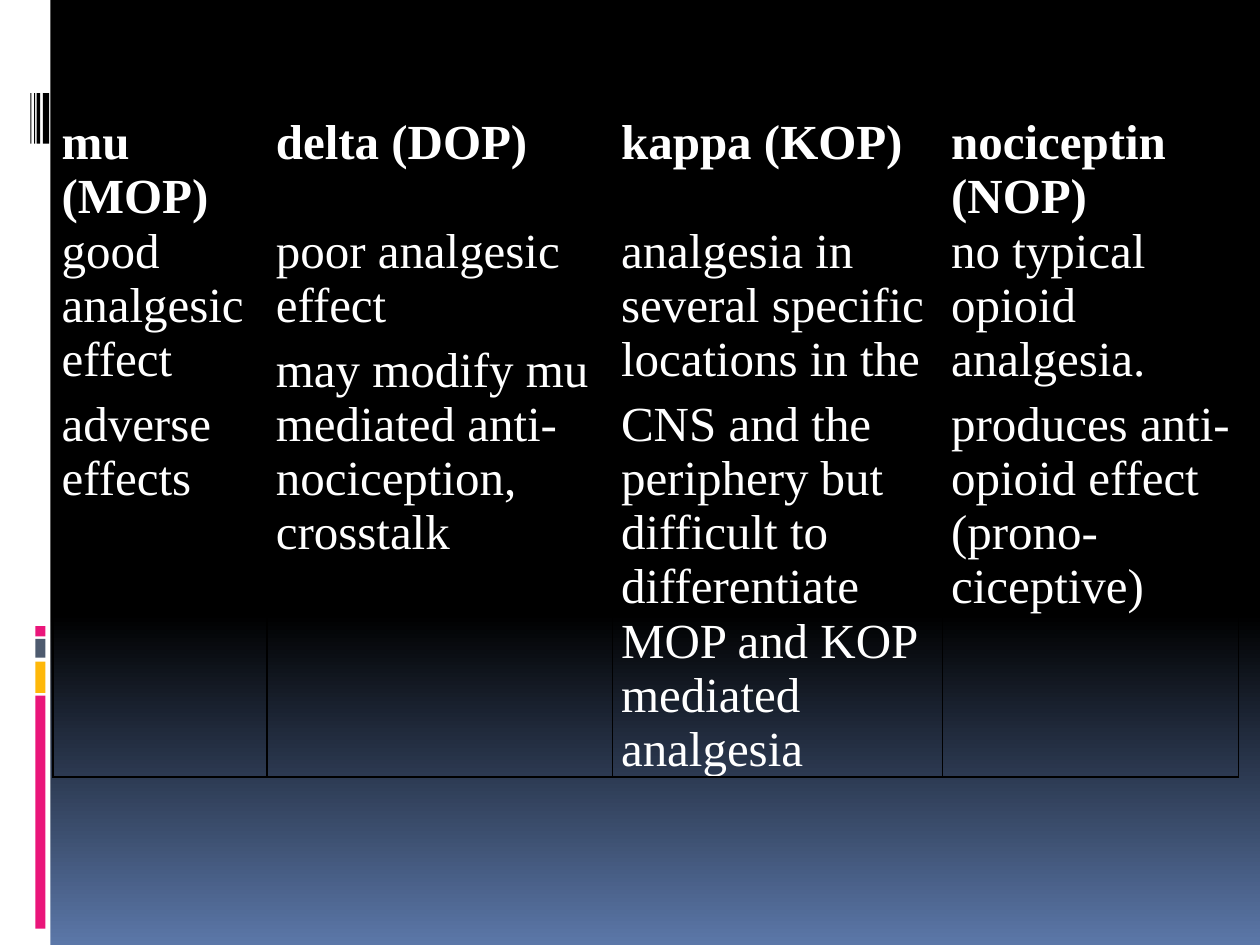
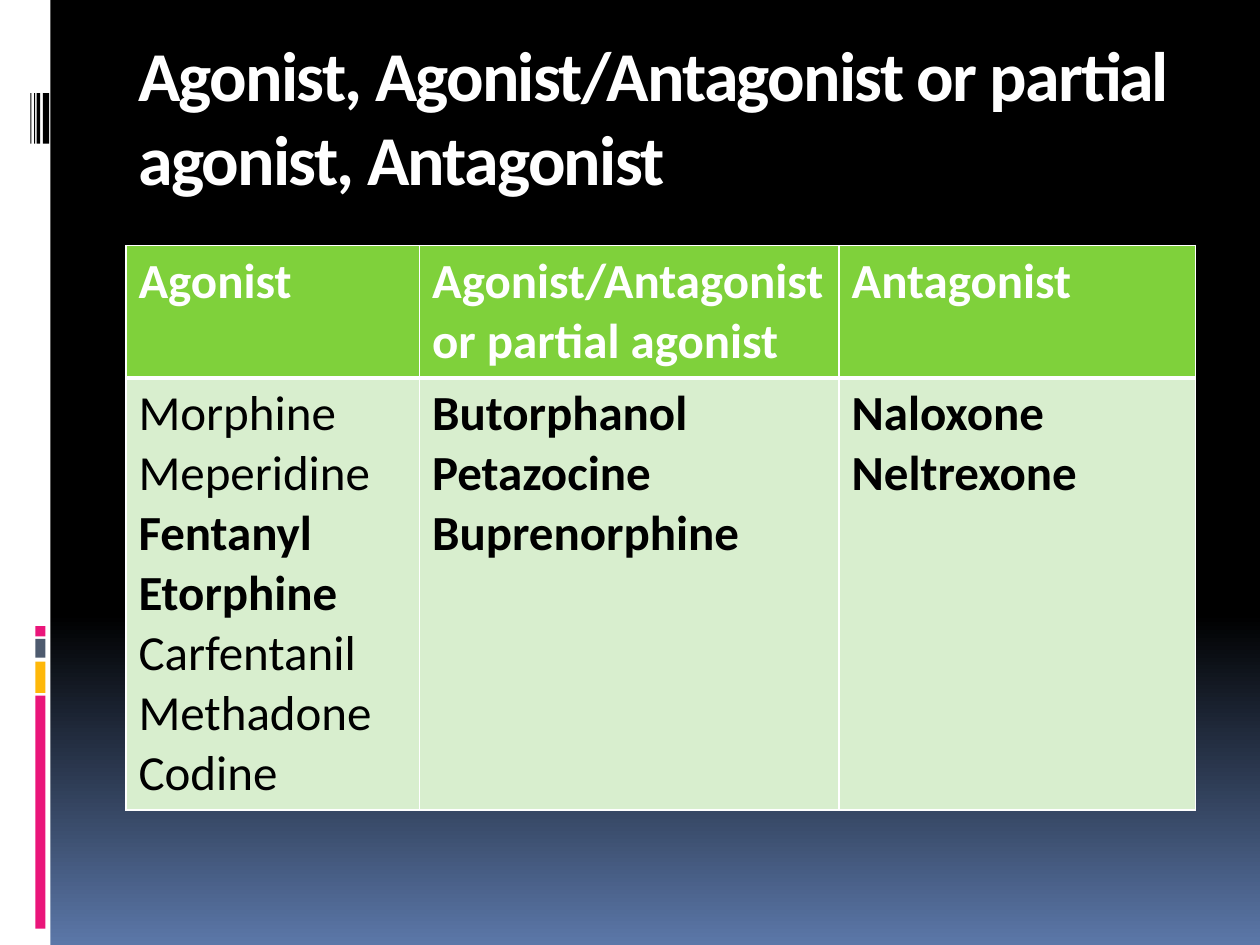
from dataclasses import dataclass
from lxml.etree import SubElement
from pptx import Presentation
from pptx.dml.color import RGBColor
from pptx.enum.shapes import MSO_SHAPE
from pptx.enum.text import MSO_ANCHOR
from pptx.oxml.ns import qn
from pptx.util import Inches, Pt


@dataclass(frozen=True)
class Theme:
    black: str = "000000"
    white: str = "FFFFFF"
    blue: str = "5B77A8"
    pink: str = "EA157A"
    gold: str = "FEB80A"
    slate: str = "4E5B6F"
    green: str = "7FD13B"
    pale: str = "D8EECE"
    serif: str = "Times New Roman"
    sans: str = "Calibri"
    title: int = 40
    body: int = 28


T = Theme()


def rgb(code):
    return RGBColor.from_string(code)


def bar(slide, x, y, w, h, color):
    shape = slide.shapes.add_shape(
        MSO_SHAPE.RECTANGLE, Inches(x), Inches(y), Inches(w), Inches(h))
    shape.shadow.inherit = False
    shape.fill.solid()
    shape.fill.fore_color.rgb = rgb(color)
    shape.line.fill.background()


def write(para, text, font, size, color, bold):
    para.text = text
    para.font.name = font
    para.font.size = Pt(size)
    para.font.bold = bold
    para.font.color.rgb = rgb(color)


def frame(deck):
    """Add a slide with the shared background and left band."""
    slide = deck.slides.add_slide(deck.slide_layouts[6])
    fill = slide.background.fill
    fill.gradient()
    fill.gradient_angle = 270
    for stop, place, color in zip(fill.gradient_stops, (0.65, 1), (T.black, T.blue)):
        stop.position = place
        stop.color.rgb = rgb(color)

    # White band with its colour stack and black stripes
    bar(slide, 0, 0, 0.4, 7.5, T.white)
    for y, h, color in ((5.52, 1.85, T.pink), (5.25, 0.25, T.gold),
                        (5.07, 0.15, T.slate), (4.97, 0.08, T.pink)):
        bar(slide, 0.28, y, 0.08, h, color)
    for x, w in ((0.34, 0.05), (0.29, 0.03), (0.27, 0.01), (0.24, 0.01)):
        bar(slide, x, 0.74, w, 0.4, T.black)
    return slide


def heading(slide, box, text):
    shape = slide.shapes.add_textbox(*map(Inches, box))
    area = shape.text_frame
    area.word_wrap = True
    area.vertical_anchor = MSO_ANCHOR.TOP
    para = area.paragraphs[0]
    write(para, text, T.sans, T.title, T.white, True)
    para.runs[0].font._element.set("spc", "-100")


def edge(cell, color, top=1, bottom=1):
    props = cell._tc.get_or_add_tcPr()
    for side, width in (("L", 1), ("R", 1), ("T", top), ("B", bottom)):
        line = SubElement(props, qn(f"a:ln{side}"), w=str(Pt(width)))
        paint = SubElement(line, qn("a:solidFill"))
        SubElement(paint, qn("a:srgbClr"), val=color)


def grid(slide, left, top, cols, rows):
    """Add a plain table whose size follows from its columns and rows."""
    table = slide.shapes.add_table(
        len(rows), len(cols), Inches(left), Inches(top),
        Inches(sum(cols)), Inches(sum(rows))).table
    table.first_row = table.horz_banding = False
    for col, width in zip(table.columns, cols):
        col.width = Inches(width)
    for row, height in zip(table.rows, rows):
        row.height = Inches(height)
    return table


def lines(cell, texts):
    """Yield each text with the paragraph that will hold it."""
    area = cell.text_frame
    for i, text in enumerate(texts):
        yield text, area.add_paragraph() if i else area.paragraphs[0]


def effects(slide, left, top):
    """Clear table of receptors and their effects."""
    data = (
        ("mu (MOP)", ("good analgesic effect", "adverse effects")),
        ("delta (DOP)", ("poor analgesic effect",
                         "may modify mu mediated anti-nociception, crosstalk")),
        ("kappa (KOP)", ("analgesia in several specific locations in the",
                         "CNS and the periphery but difficult to differentiate "
                         "MOP and KOP mediated analgesia")),
        ("nociceptin (NOP)", ("no typical opioid analgesia.",
                              "produces anti-opioid effect (prono-ciceptive)")),
    )
    table = grid(slide, left, top, (1.7, 2.74, 2.62, 2.35), (0.86, 4.38))
    for c, (name, notes) in enumerate(data):
        for r, texts in enumerate(((name,), notes)):
            cell = table.cell(r, c)
            cell.margin_left = cell.margin_right = Inches(0.07)
            cell.margin_top = cell.margin_bottom = 0
            edge(cell, T.black)
            cell.fill.background()
            for text, para in lines(cell, texts):
                write(para, text, T.serif, T.body, T.white, r == 0)
                para.space_before = para.space_after = Pt(3)


def drugs(slide, left, top):
    """Green table of drugs by class."""
    data = (
        ("Agonist", ("Morphine", "Meperidine", "Fentanyl", "Etorphine",
                     "Carfentanil", "Methadone", "Codine")),
        ("Agonist/Antagonist or partial agonist",
         ("Butorphanol", "Petazocine", "Buprenorphine")),
        ("Antagonist", ("Naloxone", "Neltrexone")),
    )
    light = {"Morphine", "Meperidine", "Carfentanil", "Methadone", "Codine"}
    table = grid(slide, left, top, (2.33, 3.33, 2.83), (1.05, 3.43))
    for c, (name, items) in enumerate(data):
        looks = (((name,), T.green, T.white, 1, 3), (items, T.pale, T.black, 3, 1))
        for r, (texts, back, ink, upper, lower) in enumerate(looks):
            cell = table.cell(r, c)
            edge(cell, T.white, upper, lower)
            cell.fill.solid()
            cell.fill.fore_color.rgb = rgb(back)
            for text, para in lines(cell, texts):
                write(para, text, T.sans, T.body, ink, text not in light)


def main():
    deck = Presentation()
    deck.slide_width, deck.slide_height = Inches(10), Inches(7.5)

    # Receptor effects
    effects(frame(deck), 0.42, 0.92)

    # Drug classes
    slide = frame(deck)
    heading(slide, (1, 0.2, 8.5, 1.45),
            "Agonist, Agonist/Antagonist or partial agonist, Antagonist")
    drugs(slide, 1, 1.95)

    deck.save("out.pptx")


if __name__ == "__main__":
    main()
